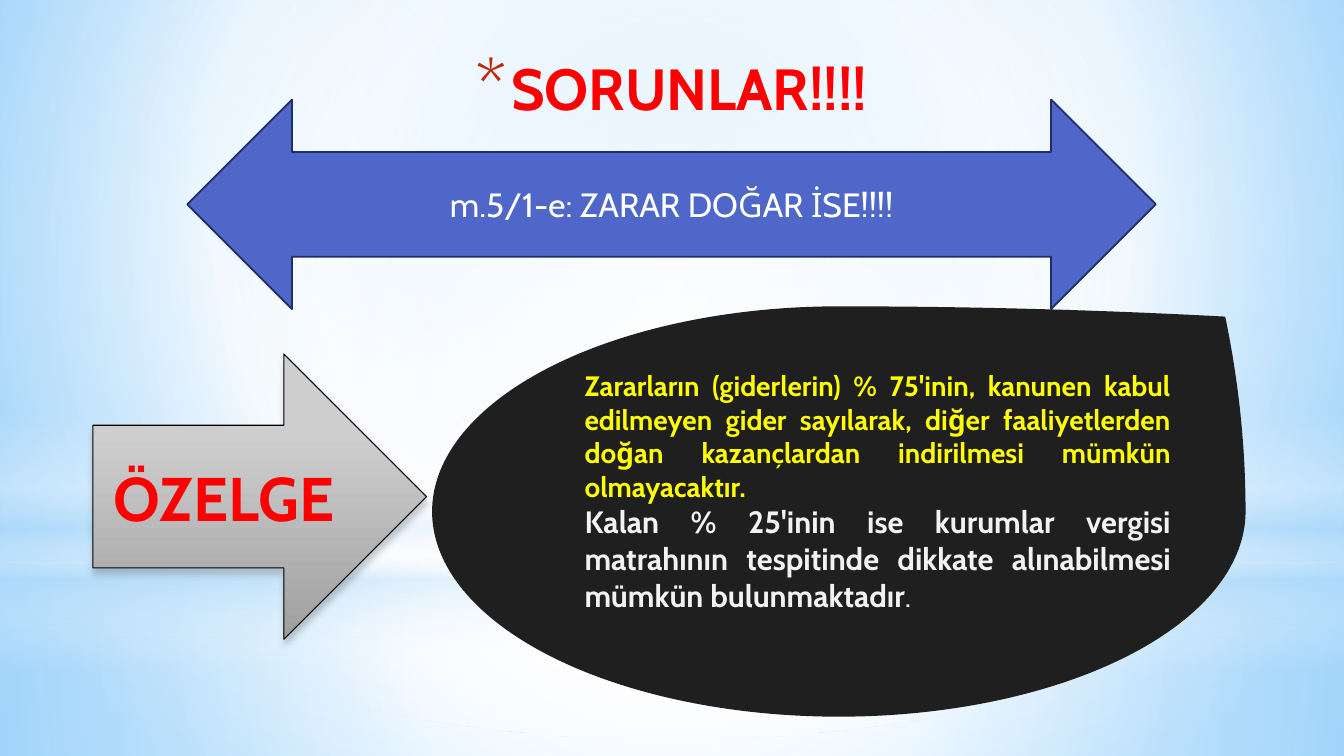
from pptx import Presentation
from pptx.dml.color import RGBColor
from pptx.enum.shapes import MSO_SHAPE
from pptx.enum.text import MSO_ANCHOR, PP_ALIGN
from pptx.oxml import parse_xml
from pptx.oxml.ns import nsdecls, qn
from pptx.util import Cm, Pt

RECTANGLE, ELLIPSE = MSO_SHAPE.RECTANGLE, MSO_SHAPE.OVAL
DOUBLE_ARROW, RIGHT_ARROW = MSO_SHAPE.LEFT_RIGHT_ARROW, MSO_SHAPE.RIGHT_ARROW
TEARDROP = MSO_SHAPE.TEAR
TOP, MIDDLE = MSO_ANCHOR.TOP, MSO_ANCHOR.MIDDLE
CENTER, JUSTIFY = PP_ALIGN.CENTER, PP_ALIGN.JUSTIFY

FONT = "Cabin"
COLORS = {
    "white": "FFFFFF", "mist": "B4DCFA", "sky": "9ED5FF", "azure": "5BB9FF",
    "red": "FF0000", "bullet": "C3260C", "indigo": "4E67C8", "navy": "1F2E69",
    "silver": "CECECE", "gray": "9F9F9F", "black": "000000",
    "charcoal": "1F1F1F", "yellow": "FFFF00", "pale": "F2F2F2",
}

WIDTH, HEIGHT = 33.87, 19.05
HORIZON = 14.17
MIDPOINT = (50, 50, 50, 50)
BACKGROUND = [(0, "sky", 100), (60, "white", 100), (100, "azure", 100)]
BACKDROPS = [
    (RECTANGLE, (0, HORIZON, WIDTH, HEIGHT - HORIZON),
     [(0, "white", 91), (37, "white", 76), (100, "mist", 79)], MIDPOINT),
    (RECTANGLE, (0, 0, WIDTH, HORIZON),
     [(0, "white", 89), (48, "white", 62), (100, "mist", 79)], MIDPOINT),
    (RECTANGLE, (0, 10.46, WIDTH, 6.35),
     [(0, "white", 0), (29, "white", 30), (45, "mist", 40),
      (55, "white", 26), (65, "mist", 60), (100, "white", 0)], None),
    (ELLIPSE, (0, 4.45, WIDTH, HORIZON),
     [(0, "white", 100), (56, "white", 0)], MIDPOINT),
]

TITLE = [[("SORUNLAR!!!!", 41.4, "red", True)]]
ISSUE = [[("m.5/1-e: ZARAR DOĞAR İSE!!!!", 24, "white", False)]]
RULING = [[("ÖZELGE", 44, "red", True)]]
EXPLANATION = [
    [("Zararların (giderlerin) % 75'inin, kanunen kabul edilmeyen gider sayılarak, "
      "diğer faaliyetlerden doğan kazançlardan indirilmesi mümkün olmayacaktır.",
      20, "yellow", True)],
    [("Kalan % 25'inin ise kurumlar vergisi matrahının tespitinde dikkate "
      "alınabilmesi mümkün bulunmaktadır", 22, "pale", True),
     (".", 22, "pale", False)],
]


def color(name):
    return RGBColor.from_string(COLORS[name])


def set_gradient(fill, element, stops, focus=None):
    fill.gradient()
    stop_xml = "".join(
        f'<a:gs pos="{position * 1000}"><a:srgbClr val="{COLORS[name]}">'
        f'<a:alpha val="{opacity * 1000}"/></a:srgbClr></a:gs>'
        for position, name, opacity in stops)
    direction = '<a:lin ang="5400000" scaled="0"/>'
    if focus:
        sides = " ".join(f'{side}="{value * 1000}"' for side, value in zip("ltrb", focus))
        direction = f'<a:path path="circle"><a:fillToRect {sides}/></a:path>'
    gradient = parse_xml(
        f'<a:gradFill {nsdecls("a")} rotWithShape="1">'
        f"<a:gsLst>{stop_xml}</a:gsLst>{direction}</a:gradFill>")
    previous = element.find(".//" + qn("a:gradFill"))
    previous.getparent().replace(previous, gradient)


def add_shape(slide, kind, box, fill=None, line=None, line_width=1):
    shape = slide.shapes.add_shape(kind, *map(Cm, box))
    shape.shadow.inherit = False
    if fill:
        shape.fill.solid()
        shape.fill.fore_color.rgb = color(fill)
    if line:
        shape.line.color.rgb = color(line)
        shape.line.width = Pt(line_width)
    else:
        shape.line.fill.background()
    return shape


def write(shape, paragraphs, alignment=CENTER, anchor=MIDDLE):
    frame = shape.text_frame
    frame.word_wrap = True
    frame.vertical_anchor = anchor
    for index, runs in enumerate(paragraphs):
        paragraph = frame.add_paragraph() if index else frame.paragraphs[0]
        paragraph.alignment = alignment
        _, size, name, bold = runs[0]
        paragraph.font.name = FONT
        paragraph.font.size = Pt(size)
        paragraph.font.color.rgb = color(name)
        paragraph.font.bold = bold if len(runs) == 1 else None
        for text, size, name, bold in runs:
            run = paragraph.add_run()
            run.text = text
            run.font.name = FONT
            run.font.size = Pt(size)
            run.font.color.rgb = color(name)
            run.font.bold = bold


def add_bullet(paragraph):
    properties = paragraph._p.get_or_add_pPr()
    properties.set("marL", str(Cm(0.89)))
    properties.set("indent", str(-Cm(0.89)))
    bullet = [
        f'<a:buClr {nsdecls("a")}><a:srgbClr val="{COLORS["bullet"]}"/></a:buClr>',
        f'<a:buSzPct {nsdecls("a")} val="128000"/>',
        f'<a:buFont {nsdecls("a")} typeface="{FONT}"/>',
        f'<a:buChar {nsdecls("a")} char="*"/>',
    ]
    for offset, xml in enumerate(bullet):
        properties.insert(offset, parse_xml(xml))


def add_shadow(shape):
    effects = shape._element.spPr.find(qn("a:effectLst"))
    effects.append(parse_xml(
        f'<a:outerShdw {nsdecls("a")} blurRad="{Pt(5)}" dist="{Pt(4)}" dir="5400000" '
        f'rotWithShape="0"><a:srgbClr val="{COLORS["black"]}"><a:alpha val="20000"/>'
        "</a:srgbClr></a:outerShdw>"))


def main():
    presentation = Presentation()
    presentation.slide_width, presentation.slide_height = Cm(WIDTH), Cm(HEIGHT)
    slide = presentation.slides.add_slide(presentation.slide_layouts[6])
    set_gradient(slide.background.fill, slide._element, BACKGROUND, (20, 10, 20, 60))

    for kind, box, stops, focus in BACKDROPS:
        backdrop = add_shape(slide, kind, box)
        set_gradient(backdrop.fill, backdrop._element, stops, focus)

    title = slide.shapes.add_textbox(*map(Cm, (3.38, 1.19, 27.08, 1.73)))
    write(title, TITLE, anchor=TOP)
    add_bullet(title.text_frame.paragraphs[0])

    issue = add_shape(slide, DOUBLE_ARROW, (4.72, 2.51, 24.41, 5.28), "indigo", "navy", 1.25)
    write(issue, ISSUE)

    ruling = add_shape(slide, RIGHT_ARROW, (2.34, 8.92, 8.41, 7.19), line="black", line_width=0.75)
    set_gradient(ruling.fill, ruling._element, [(28, "silver", 100), (100, "gray", 100)])
    add_shadow(ruling)
    write(ruling, RULING)

    explanation = add_shape(slide, TEARDROP, (10.89, 7.72, 20.5, 10.34), "charcoal")
    explanation.adjustments[0] = 0.95
    frame = explanation.text_frame
    frame.margin_left, frame.margin_right = Cm(0.84), Cm(-1.12)
    frame.margin_bottom = Cm(1.14)
    write(explanation, EXPLANATION, JUSTIFY)

    presentation.save("out.pptx")


if __name__ == "__main__":
    main()
